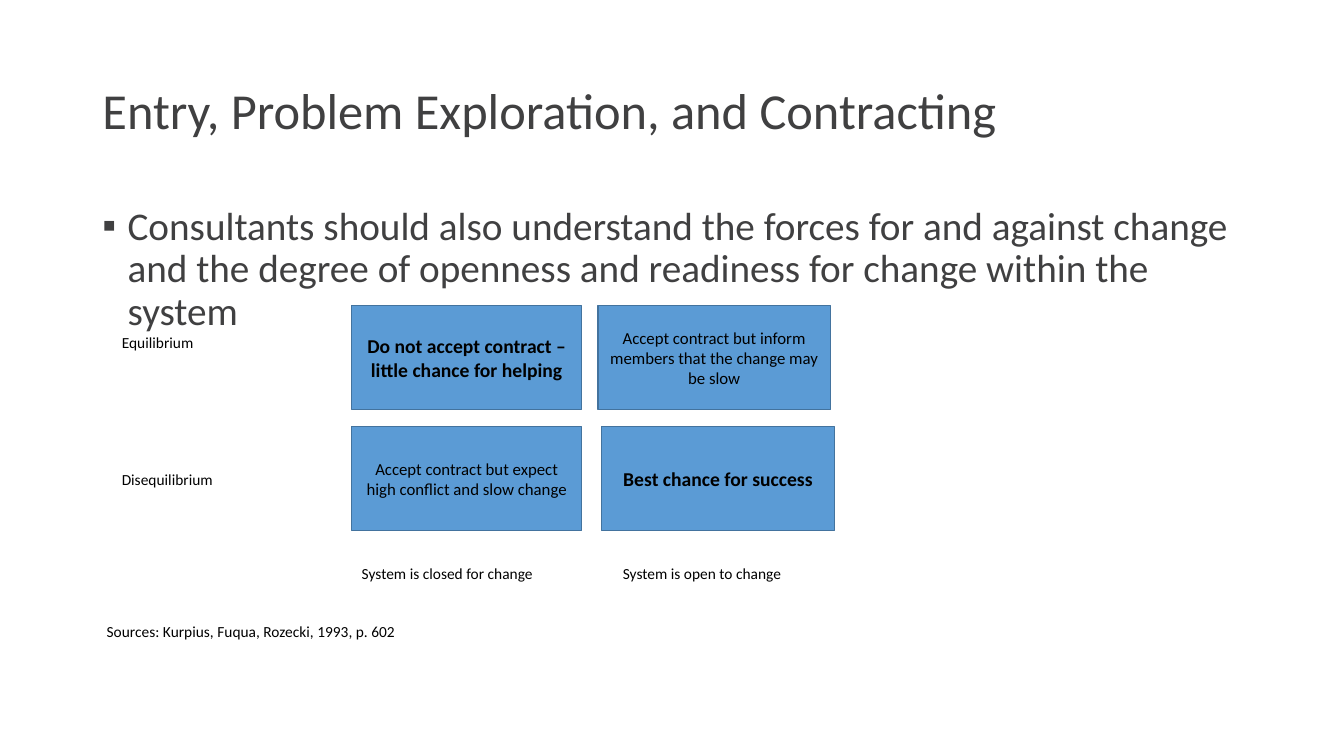
"""Builds a slide on change readiness with a two-by-two grid of contract advice."""
from lxml import etree
from pptx import Presentation
from pptx.dml.color import RGBColor
from pptx.enum.shapes import MSO_SHAPE as Shape
from pptx.enum.text import MSO_ANCHOR as Anchor, MSO_AUTO_SIZE as AutoSize, PP_ALIGN as Align
from pptx.oxml.ns import qn
from pptx.util import Pt

COLORS = {"heading": "404041", "text": "000000", "fill": "5B9BD5", "outline": "43739E"}
FONT = "Calibri"

ADVICE = [
    (251.3, 218.2, 164.2, "Do not accept contract – little chance for helping", True),
    (427, 218.2, 166.3, "Accept contract but inform members that the change may be slow", False),
    (251.3, 304.6, 164.2, "Accept contract but expect high conflict and slow change", False),
    (429.8, 304.6, 166.3, "Best chance for success", True),
]
LABELS = [
    (79.9, 234.7, 150.5, "Equilibrium"),
    (79.9, 331.9, 139.7, "Disequilibrium"),
    (251.3, 399.6, 172.8, "System is closed for change"),
    (437.8, 399.6, 158.4, "System is open to change"),
    (69.1, 440.6, 573.8, "Sources: Kurpius, Fuqua, Rozecki, 1993, p. 602"),
]


def color(name):
    return RGBColor.from_string(COLORS[name])


def write(box, text, size=11, ink="text", bold=False, align=Align.LEFT,
          anchor=Anchor.TOP, spacing=1.0, bullet=None):
    frame = box.text_frame
    frame.word_wrap = True
    frame.auto_size = AutoSize.NONE
    frame.vertical_anchor = anchor
    para = frame.paragraphs[0]
    para.alignment = align
    para.line_spacing = spacing
    para.space_before = Pt(0)
    if bullet:
        add_bullet(para, bullet)
    span = para.add_run()
    span.text = text
    span.font.name = FONT
    span.font.size = Pt(size)
    span.font.bold = bold
    span.font.color.rgb = color(ink)


def add_bullet(para, symbol, indent=18):
    properties = para._p.get_or_add_pPr()
    properties.set("marL", str(Pt(indent)))
    properties.set("indent", str(-Pt(indent)))
    etree.SubElement(properties, qn("a:buFont"), typeface="Arial")
    etree.SubElement(properties, qn("a:buChar"), char=symbol)


def place(box, left, top, width, height):
    box.left, box.top, box.width, box.height = Pt(left), Pt(top), Pt(width), Pt(height)


def add_advice(page, left, top, width, text, key):
    box = page.shapes.add_shape(Shape.RECTANGLE, Pt(left), Pt(top), Pt(width), Pt(74.5))
    box.shadow.inherit = False
    box.fill.solid()
    box.fill.fore_color.rgb = color("fill")
    box.line.color.rgb = color("outline")
    box.line.width = Pt(1)
    write(box, text, size=14 if key else 12, bold=key, align=Align.CENTER, anchor=Anchor.MIDDLE)


def add_label(page, left, top, width, text):
    box = page.shapes.add_textbox(Pt(left), Pt(top), Pt(width), Pt(20.9))
    write(box, text)


def main():
    deck = Presentation()
    deck.slide_width, deck.slide_height = Pt(960), Pt(540)
    page = deck.slides.add_slide(deck.slide_layouts[1])
    title, body = page.placeholders

    place(title, 66, 28.8, 828, 104.4)
    write(title, "Entry, Problem Exploration, and Contracting", size=36, ink="heading",
          anchor=Anchor.MIDDLE, spacing=0.9)
    place(body, 66, 144, 828, 342.7)
    write(body, "Consultants should also understand the forces for and against change "
          "and the degree of openness and readiness for change within the system",
          size=28, ink="heading", spacing=0.9, bullet="▪")

    for advice in ADVICE:
        add_advice(page, *advice)
    for label in LABELS:
        add_label(page, *label)
    deck.save("out.pptx")


if __name__ == "__main__":
    main()
